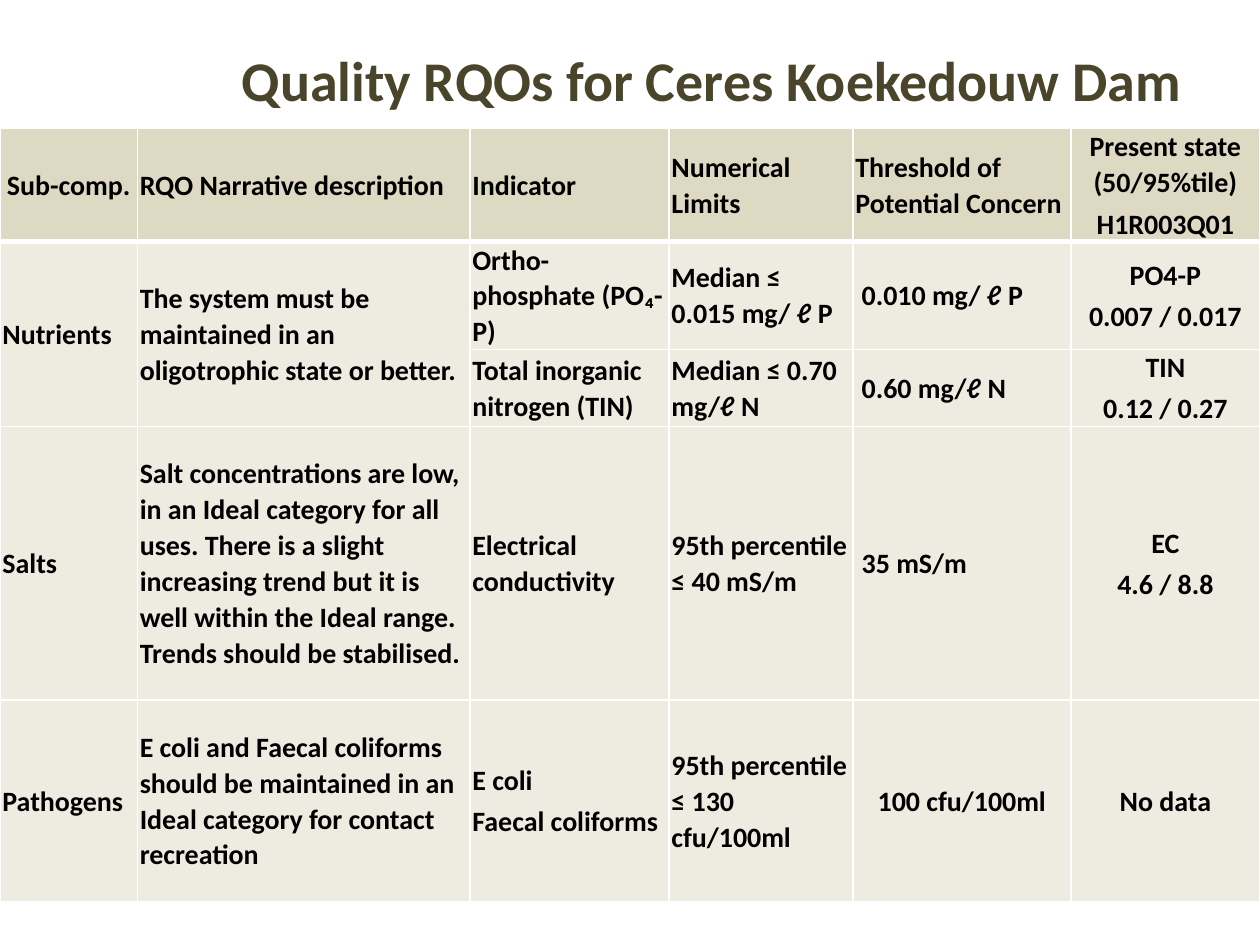
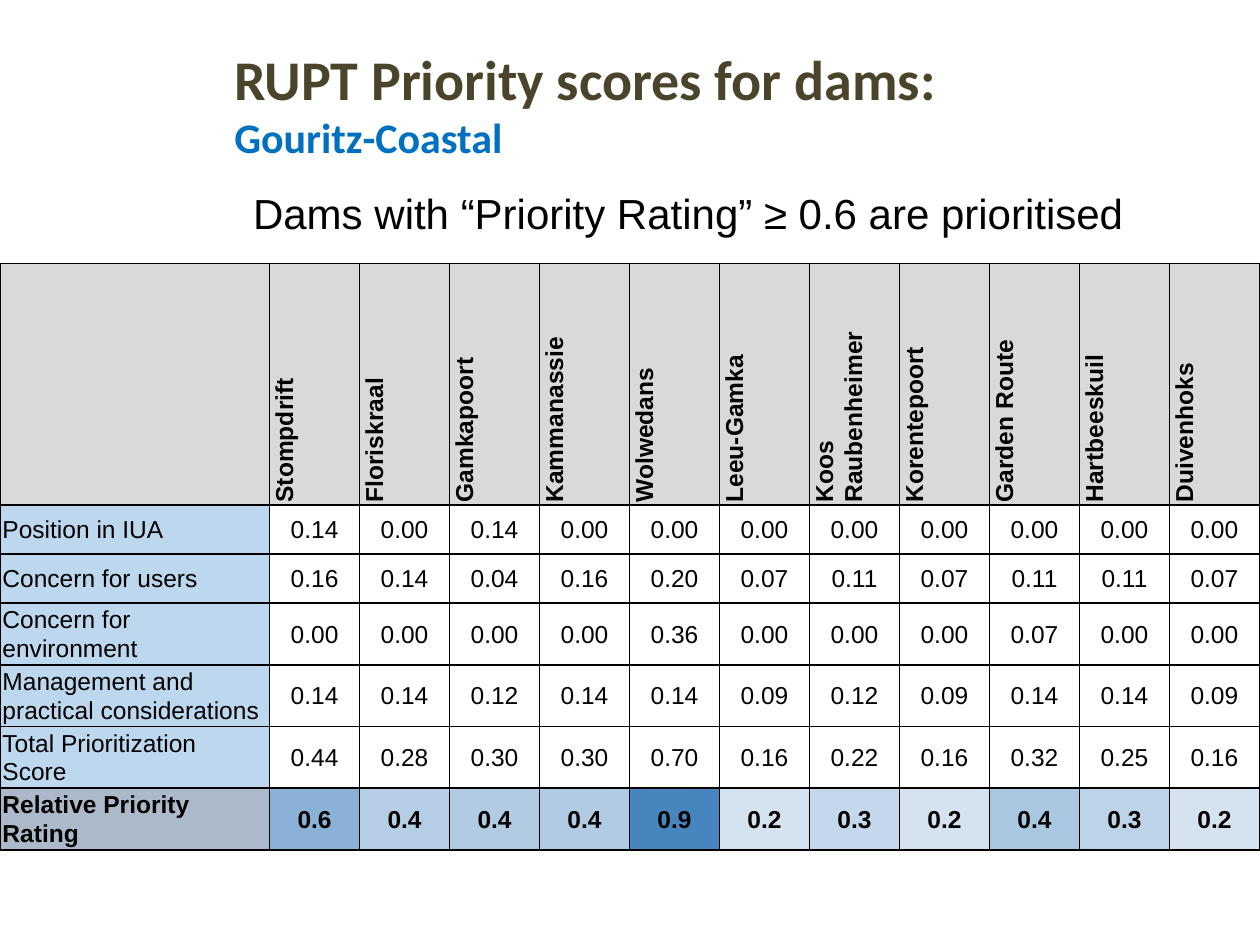
from itertools import product

from lxml import etree
from pptx import Presentation
from pptx import util as u
from pptx.dml.color import RGBColor
from pptx.enum import text
from pptx.oxml import ns

SLIDE_WIDTH, SLIDE_HEIGHT = u.Inches(10), u.Inches(7.5)
COLUMN, ROW = SLIDE_WIDTH / 100, SLIDE_HEIGHT / 75
INSET = u.Inches(0.02)
INDENT = u.Inches(0.07)
TITLE_FONT, SCORE_FONT = "Calibri", "Arial"

BLACK = RGBColor(0x00, 0x00, 0x00)
WHITE = RGBColor(0xFF, 0xFF, 0xFF)
OLIVE = RGBColor(0x4A, 0x45, 0x2A)
BLUE = RGBColor(0x00, 0x70, 0xC0)
SAND = RGBColor(0xDD, 0xD9, 0xC3)
PALE_SAND = RGBColor(0xEE, 0xEC, 0xE1)
GREY = RGBColor(0xD9, 0xD9, 0xD9)
LIGHT_BLUE = RGBColor(0xBD, 0xD7, 0xEE)
SLATE = RGBColor(0xAC, 0xB9, 0xCA)
RATING_FILLS = [RGBColor.from_string(shade) for shade in (
    "8AB2D6", "B5CEE5", "B1CBE3", "B0CBE3", "4785BE", "D5E3F0",
    "C5D8EB", "D5E3F0", "AAC7E1", "BDD4E8", "D5E3F0")]

OBJECTIVE_COLUMNS = [10.9, 26.4, 15.8, 14.6, 17.3, 15]
OBJECTIVE_ROWS = [8.7, 8.5, 5.9, 21.7, 16]
OBJECTIVES = [
    ["Sub-comp.", "RQO Narrative description", "Indicator", "Numerical Limits",
     "Threshold of Potential Concern", "Present state (50/95%tile)\nH1R003Q01"],
    ["Nutrients", "The system must be maintained in an oligotrophic state or better.",
     "Ortho-phosphate (PO₄-P)", "Median ≤ 0.015 mg/ ℓ P", "0.010 mg/ ℓ P",
     "PO4-P\n0.007 / 0.017"],
    ["", "", "Total inorganic nitrogen (TIN)", "Median ≤ 0.70 mg/ℓ N",
     "0.60 mg/ℓ N", "TIN\n0.12 / 0.27"],
    ["Salts", "Salt concentrations are low, in an Ideal category for all uses. "
     "There is a slight increasing trend but it is well within the Ideal range. "
     "Trends should be stabilised.", "Electrical conductivity",
     "95th percentile ≤ 40 mS/m", "35 mS/m", "EC\n4.6 / 8.8"],
    ["Pathogens", "E coli and Faecal coliforms should be maintained in an Ideal "
     "category for contact recreation", "E coli\nFaecal coliforms",
     "95th percentile ≤ 130 cfu/100ml", "100 cfu/100ml", "No data"],
]
CENTRED_OBJECTIVES = {(0, 0), (4, 4)} | {(row, 5) for row in range(5)}

SCORE_COLUMNS = [21.4] + [78.6 / 11] * 11
SCORE_ROWS = [19.1, 3.9, 3.9] + [4.9] * 4
SCORES = [
    ["", "Stompdrift", "Floriskraal", "Gamkapoort", "Kammanassie", "Wolwedans",
     "Leeu-Gamka", "Koos Raubenheimer", "Korentepoort", "Garden Route",
     "Hartbeeskuil", "Duivenhoks"],
    ["Position in IUA", "0.14", "0.00", "0.14", "0.00", "0.00", "0.00",
     "0.00", "0.00", "0.00", "0.00", "0.00"],
    ["Concern for users", "0.16", "0.14", "0.04", "0.16", "0.20", "0.07",
     "0.11", "0.07", "0.11", "0.11", "0.07"],
    ["Concern for environment", "0.00", "0.00", "0.00", "0.00", "0.36", "0.00",
     "0.00", "0.00", "0.07", "0.00", "0.00"],
    ["Management and practical considerations", "0.14", "0.14", "0.12", "0.14",
     "0.14", "0.09", "0.12", "0.09", "0.14", "0.14", "0.09"],
    ["Total Prioritization Score", "0.44", "0.28", "0.30", "0.30", "0.70",
     "0.16", "0.22", "0.16", "0.32", "0.25", "0.16"],
    ["Relative Priority Rating", "0.6", "0.4", "0.4", "0.4", "0.9", "0.2",
     "0.3", "0.2", "0.4", "0.3", "0.2"],
]


def grid(left, top, width, height):
    return (round(left * COLUMN), round(top * ROW),
            round(width * COLUMN), round(height * ROW))


def style(run, font, size, colour, bold=False):
    run.font.name = font
    run.font.size = u.Pt(size)
    run.font.color.rgb = colour
    run.font.bold = bold


def add_titled_slide(deck, box, heading, subheading=None):
    slide = deck.slides.add_slide(deck.slide_layouts[5])
    title = slide.shapes.title
    title.left, title.top, title.width, title.height = box
    frame = title.text_frame
    frame.text = "\v".join(filter(None, (heading, subheading)))
    frame.word_wrap = True
    frame.auto_size = text.MSO_AUTO_SIZE.NONE
    frame.vertical_anchor = text.MSO_ANCHOR.MIDDLE
    line = frame.paragraphs[0]
    line.alignment = text.PP_ALIGN.LEFT
    for run, size, colour in zip(line.runs, (32, 24), (OLIVE, BLUE)):
        style(run, TITLE_FONT, size, colour, True)
    return slide


def add_note(slide, box, wording):
    note = slide.shapes.add_textbox(*box)
    frame = note.text_frame
    frame.text = wording
    frame.word_wrap = True
    style(frame.paragraphs[0].runs[0], SCORE_FONT, 24, BLACK)


def add_grid_table(slide, left, top, columns, rows):
    box = grid(left, top, sum(columns), sum(rows))
    table = slide.shapes.add_table(len(rows), len(columns), *box).table
    table.horz_banding = False
    for column, width in zip(table.columns, columns):
        column.width = round(width * COLUMN)
    for row, height in zip(table.rows, rows):
        row.height = round(height * ROW)
    return table


def set_borders(cell, colour, bottom=1, top=1):
    properties = cell._tc.get_or_add_tcPr()
    edges = {"a:lnL": 1, "a:lnR": 1, "a:lnT": top, "a:lnB": bottom}
    for position, (edge, points) in enumerate(edges.items()):
        line = etree.Element(ns.qn(edge), w=str(u.Pt(points)))
        fill = etree.SubElement(line, ns.qn("a:solidFill"))
        etree.SubElement(fill, ns.qn("a:srgbClr"), val=str(colour))
        properties.insert(position, line)


def fill_cell(cell, wording, fill, font, size, bold, centred):
    cell.text = wording
    cell.vertical_anchor = text.MSO_ANCHOR.MIDDLE
    cell.margin_left = cell.margin_right = INSET
    cell.margin_top = cell.margin_bottom = 0
    if fill is None:
        cell.fill.background()
    else:
        cell.fill.solid()
        cell.fill.fore_color.rgb = fill
    for number, paragraph in enumerate(cell.text_frame.paragraphs):
        paragraph.line_spacing = 1.05
        if number:
            paragraph.space_before = u.Pt(3)
        paragraph.alignment = text.PP_ALIGN.CENTER if centred else text.PP_ALIGN.LEFT
        for run in paragraph.runs:
            style(run, font, size, BLACK, bold)


def add_objectives(slide, left, top):
    table = add_grid_table(slide, left, top, OBJECTIVE_COLUMNS, OBJECTIVE_ROWS)
    for row, column in product(range(len(OBJECTIVE_ROWS)), range(len(OBJECTIVE_COLUMNS))):
        cell = table.cell(row, column)
        centred = (row, column) in CENTRED_OBJECTIVES
        fill_cell(cell, OBJECTIVES[row][column], PALE_SAND if row else SAND,
                  TITLE_FONT, 16, True, centred)
        if row and column == 4 and not centred:
            cell.margin_left = INDENT
        set_borders(cell, WHITE, bottom=1 if row else 3, top=3 if row == 1 else 1)
    for column in range(2):
        table.cell(1, column).merge(table.cell(2, column))


def score_fill(row, column):
    if row == 0:
        return GREY
    if row == len(SCORES) - 1:
        return RATING_FILLS[column - 1] if column else SLATE
    return None if column else LIGHT_BLUE


def add_scores(slide, left, top):
    table = add_grid_table(slide, left, top, SCORE_COLUMNS, SCORE_ROWS)
    for row, column in product(range(len(SCORE_ROWS)), range(len(SCORE_COLUMNS))):
        cell = table.cell(row, column)
        fill_cell(cell, SCORES[row][column], score_fill(row, column), SCORE_FONT, 14,
                  row in (0, len(SCORES) - 1), row > 0 and column > 0)
        if row == 0 and column:
            cell.margin_bottom = INSET
            cell._tc.get_or_add_tcPr().set("vert", "vert270")
        set_borders(cell, BLACK)


def main():
    deck = Presentation()
    deck.slide_width, deck.slide_height = SLIDE_WIDTH, SLIDE_HEIGHT

    quality = add_titled_slide(deck, grid(18.2, 3.1, 76.8, 6.4),
                               "Quality RQOs for Ceres Koekedouw Dam")
    add_objectives(quality, 0, 10.2)

    priority = add_titled_slide(deck, grid(17.6, 3, 77.4, 10.4),
                                "RUPT Priority scores for dams:", "Gouritz-Coastal")
    add_scores(priority, 0, 20.9)
    add_note(priority, grid(19.1, 14.4, 79.1, 5),
             "Dams with “Priority Rating” ≥ 0.6 are prioritised")

    deck.save("out.pptx")


if __name__ == "__main__":
    main()
